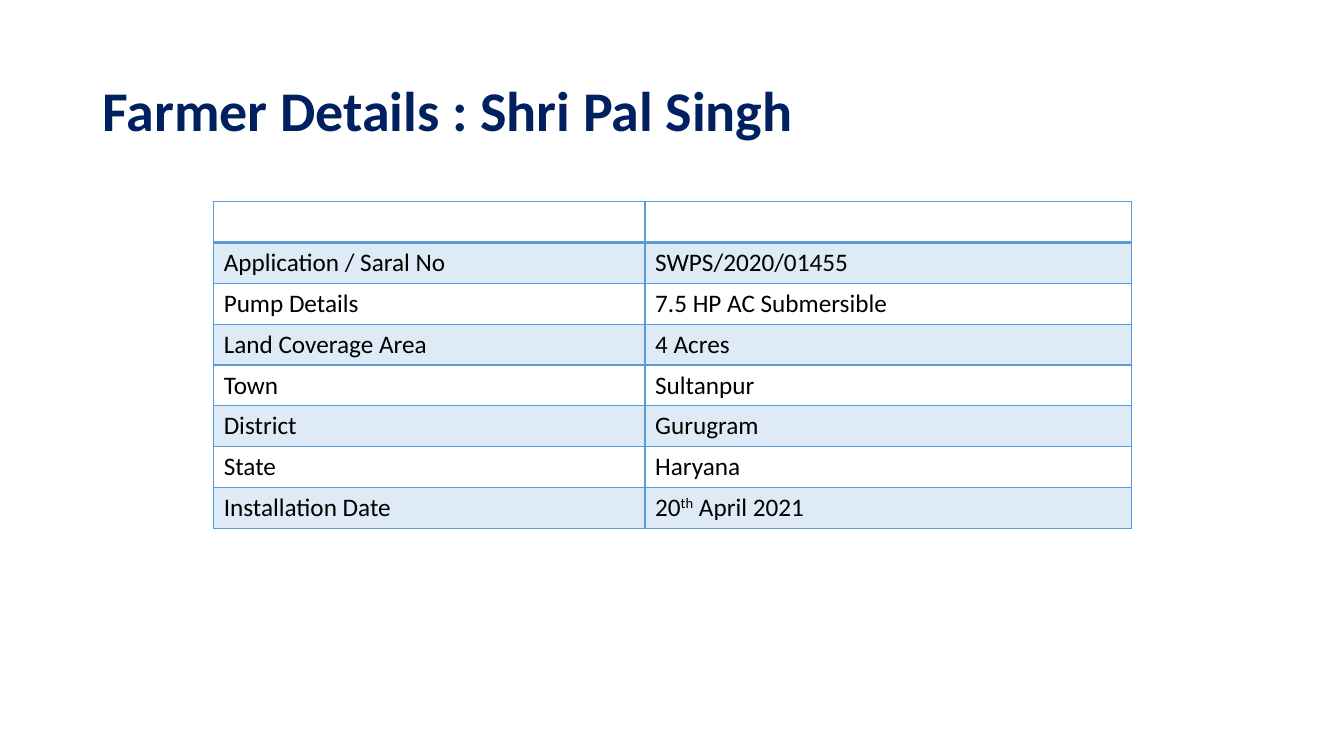
import lxml.etree
import pptx
import pptx.dml.color
import pptx.enum.text
import pptx.oxml.ns
import pptx.util

SLIDE_WIDTH, SLIDE_HEIGHT = pptx.util.Inches(13.33), pptx.util.Inches(7.5)
FONT = "Calibri"
NAVY, BLACK, BLUE = "002060", "000000", "5B9BD5"
BAND_OPACITY = 20
COLUMN_SHARES = (0.47, 0.53)
FARMER_DETAILS = [
    ("", ""),
    ("Application / Saral No", "SWPS/2020/01455"),
    ("Pump Details", "7.5 HP AC Submersible"),
    ("Land Coverage Area", "4 Acres"),
    ("Town", "Sultanpur"),
    ("District", "Gurugram"),
    ("State", "Haryana"),
    ("Installation Date", ("20", "th", " April 2021")),
]


def rgb(hex_color):
    return pptx.dml.color.RGBColor.from_string(hex_color)


def box(left, top, width, height):
    """Turn shares of the slide's size into a box in EMU."""
    return (int(left * SLIDE_WIDTH), int(top * SLIDE_HEIGHT),
            int(width * SLIDE_WIDTH), int(height * SLIDE_HEIGHT))


def style_font(font, size, color, bold=False):
    font.name, font.size, font.bold = FONT, pptx.util.Pt(size), bold
    font.color.rgb = rgb(color)


def add_child(parent, tag, **attributes):
    return lxml.etree.SubElement(parent, pptx.oxml.ns.qn(tag), attributes)


def add_title(slide, area, wording):
    frame = slide.shapes.add_textbox(*area).text_frame
    frame.word_wrap = True
    frame.vertical_anchor = pptx.enum.text.MSO_ANCHOR.MIDDLE
    heading = frame.paragraphs[0]
    heading.text = wording
    heading.line_spacing = 0.9
    style_font(heading.runs[0].font, 40, NAVY, bold=True)


def set_borders(cell, bottom_width):
    for side, width in (("L", 1), ("R", 1), ("T", 1), ("B", bottom_width)):
        line = add_child(cell._tc.get_or_add_tcPr(), f"a:ln{side}",
                         w=str(pptx.util.Pt(width)))
        add_child(add_child(line, "a:solidFill"), "a:srgbClr", val=BLUE)


def set_band(cell, banded):
    if not banded:
        cell.fill.background()
        return
    cell.fill.solid()
    cell.fill.fore_color.rgb = rgb(BLUE)
    tint = cell._tc.tcPr.find(".//" + pptx.oxml.ns.qn("a:solidFill") + "/"
                              + pptx.oxml.ns.qn("a:srgbClr") + "[last()]")
    for color in cell._tc.tcPr.findall(pptx.oxml.ns.qn("a:solidFill")):
        tint = color[0]
    add_child(tint, "a:alpha", val=str(BAND_OPACITY * 1000))


def write_cell(cell, content):
    """Write a string, or a (base, superscript, rest) triple."""
    paragraph = cell.text_frame.paragraphs[0]
    style_font(paragraph.font, 18, BLACK)
    parts = (content,) if isinstance(content, str) else content
    for index, part in enumerate(parts):
        if not part:
            continue
        run = paragraph.add_run()
        run.text = part
        style_font(run.font, 18, BLACK)
        if index == 1:
            run.font._element.set("baseline", "30000")


def add_details_table(slide, area, details):
    table = slide.shapes.add_table(len(details), len(COLUMN_SHARES), *area).table
    table.horz_banding = table.first_row = False
    for column, share in zip(table.columns, COLUMN_SHARES):
        column.width = int(area[2] * share)
    for row_index, contents in enumerate(details):
        table.rows[row_index].height = area[3] // len(details)
        for column_index, content in enumerate(contents):
            cell = table.cell(row_index, column_index)
            set_borders(cell, 2 if row_index == 0 else 1)
            set_band(cell, row_index % 2 == 1)
            write_cell(cell, content)


def build_farmer_slide(presentation):
    slide = presentation.slides.add_slide(presentation.slide_layouts[6])
    add_title(slide, box(0.069, 0.053, 0.863, 0.193),
              "Farmer Details : Shri Pal Singh")
    add_details_table(slide, box(0.159, 0.267, 0.683, 0.432), FARMER_DETAILS)


def main():
    presentation = pptx.Presentation()
    presentation.slide_width = SLIDE_WIDTH
    presentation.slide_height = SLIDE_HEIGHT
    build_farmer_slide(presentation)
    presentation.save("out.pptx")


if __name__ == "__main__":
    main()
